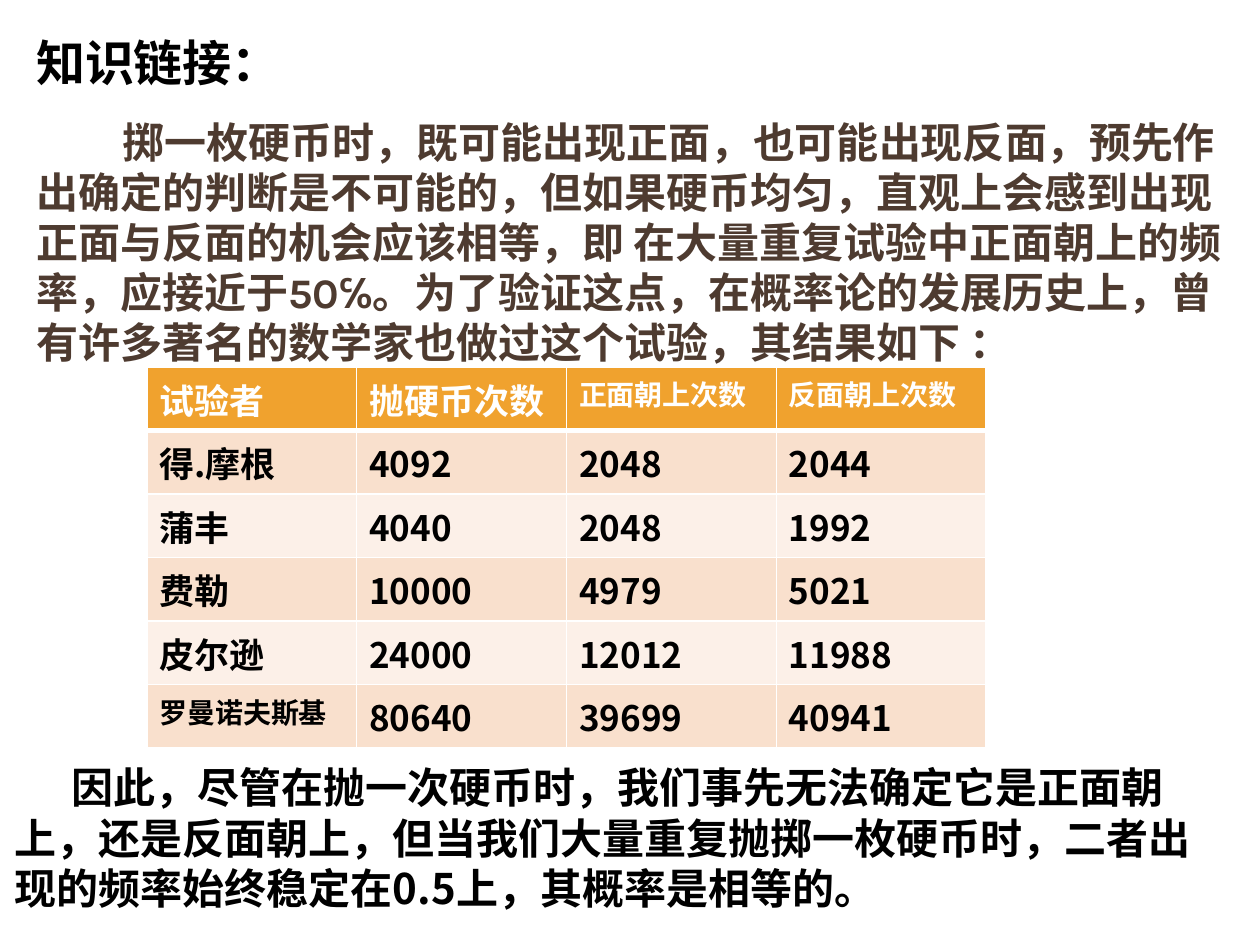
import pptx
import pptx.util
import pptx.dml.color
import pptx.enum.text
from lxml import etree

Cm, Pt = pptx.util.Cm, pptx.util.Pt
RGBColor = pptx.dml.color.RGBColor
ANCHOR = pptx.enum.text.MSO_ANCHOR
A = "http://schemas.openxmlformats.org/drawingml/2006/main"

BROWN = RGBColor(0x4E, 0x3B, 0x30)
BLACK = RGBColor(0, 0, 0)
WHITE = RGBColor(255, 255, 255)
ORANGE = RGBColor(0xF0, 0xA2, 0x2E)
BANDS = [RGBColor(0xF9, 0xE0, 0xCD), RGBColor(0xFC, 0xF0, 0xE8)]
CJK = "Noto Sans CJK SC"

TEXTS = [
    dict(text="掷一枚硬币时，既可能出现正面，也可能出现反面，预先作出确定的判断是不可能的，"
              "但如果硬币均匀，直观上会感到出现正面与反面的机会应该相等，即 在大量重复试验中"
              "正面朝上的频率，应接近于50℅。为了验证这点，在概率论的发展历史上，曾\v"
              "有许多著名的数学家也做过这个试验，其结果如下 ：",
         box=(0.48, 1.97, 25, 5.56), indent=1.75, wrap=True, anchor=ANCHOR.BOTTOM,
         spacing=28.7, font=dict(name="Karla", size=Pt(24), color=BROWN)),
    dict(text="因此，尽管在抛一次硬币时，我们事先无法确定它是正面朝\v"
              "上，还是反面朝上，但当我们大量重复抛掷一枚硬币时，二者出\v"
              "现的频率始终稳定在0.5上，其概率是相等的。",
         box=(0.05, 15.24, 24.9, 3.38), indent=1.15, wrap=True, anchor=ANCHOR.TOP,
         spacing=28.7, font=dict(name=CJK, size=Pt(24), color=BLACK)),
    dict(text="知识链接：",
         box=(0.48, 0.53, 5.5, 1.45), indent=0, wrap=False, anchor=ANCHOR.TOP,
         spacing=33.5, font=dict(name=CJK, size=Pt(28), color=BLACK)),
]

ROWS = [
    ("试验者", "抛硬币次数", "正面朝上次数", "反面朝上次数"),
    ("得.摩根", "4092", "2048", "2044"),
    ("蒲丰", "4040", "2048", "1992"),
    ("费勒", "10000", "4979", "5021"),
    ("皮尔逊", "24000", "12012", "11988"),
    ("罗曼诺夫斯基", "80640", "39699", "40941"),
]
TABLE_LEFT, TABLE_TOP, COL_W, ROW_H = 2.96, 7.4, 4.23, 1.28


def style_run(r, name, size, color):
    for key, value in dict(name=name, size=size, bold=True).items():
        setattr(r.font, key, value)
    r.font.color.rgb = color
    etree.SubElement(r.font._element, f"{{{A}}}ea", typeface=CJK)


def add_text(s, text, box, indent, wrap, anchor, spacing, font):
    tf = s.shapes.add_textbox(*map(Cm, box)).text_frame
    tf.word_wrap, tf.vertical_anchor = wrap, anchor
    p = tf.paragraphs[0]
    p.text = text
    p.line_spacing = Pt(spacing)
    if indent:
        p._p.get_or_add_pPr().set("indent", str(Cm(indent)))
    for r in p.runs:
        style_run(r, **font)


def add_borders(cell, top, bottom):
    """White cell edges, 1 pt at the sides and the given widths above and below."""
    tc_pr = cell._tc.get_or_add_tcPr()
    for i, (side, width) in enumerate(dict(lnL=1, lnR=1, lnT=top, lnB=bottom).items()):
        ln = etree.Element(f"{{{A}}}{side}", w=str(Pt(width)))
        fill = etree.SubElement(ln, f"{{{A}}}solidFill")
        etree.SubElement(fill, f"{{{A}}}srgbClr", val=str(WHITE))
        tc_pr.insert(i, ln)


def add_results(s):
    n_rows, n_cols = len(ROWS), len(ROWS[0])
    table = s.shapes.add_table(n_rows, n_cols, Cm(TABLE_LEFT), Cm(TABLE_TOP),
                               Cm(COL_W * n_cols), Cm(ROW_H * n_rows)).table
    for col in table.columns:
        col.width = Cm(COL_W)
    for i, row in enumerate(ROWS):
        head = i == 0
        table.rows[i].height = Cm(ROW_H)
        for j, text in enumerate(row):
            cell = table.cell(i, j)
            cell.fill.solid()
            cell.fill.fore_color.rgb = ORANGE if head else BANDS[(i - 1) % 2]
            add_borders(cell, top=3 if i == 1 else 1, bottom=3 if head else 1)
            r = cell.text_frame.paragraphs[0].add_run()
            r.text = text
            style_run(r, CJK, Pt(16 if len(text) > 5 else 20), WHITE if head else BLACK)


prs = pptx.Presentation()
prs.slide_width, prs.slide_height = Cm(25.4), Cm(19.05)
s = prs.slides.add_slide(prs.slide_layouts[6])
intro, conclusion, heading = TEXTS
add_text(s, **intro)
add_results(s)
add_text(s, **conclusion)
add_text(s, **heading)
prs.save("out.pptx")
